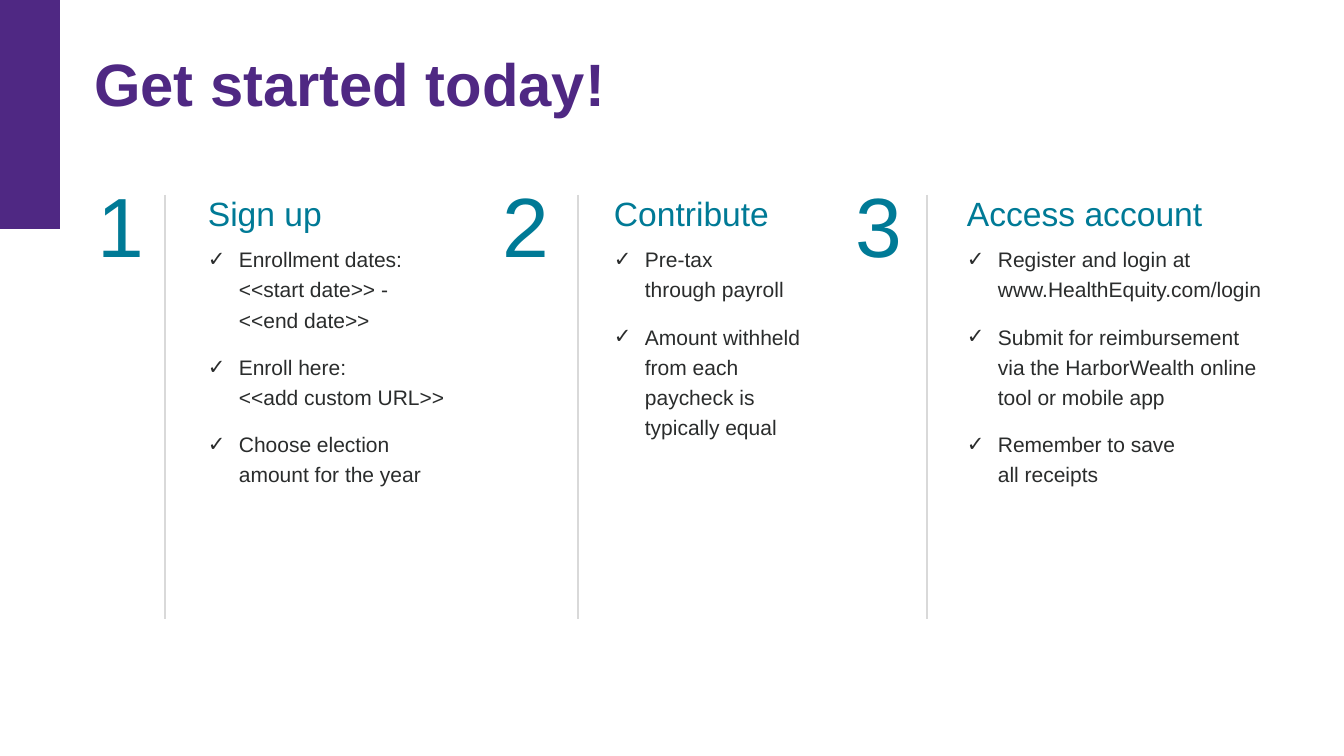
from copy import deepcopy

from lxml.etree import SubElement
from pptx import Presentation
from pptx.dml.color import RGBColor
from pptx.enum.shapes import MSO_CONNECTOR as Connector, MSO_SHAPE as Shape
from pptx.enum.text import PP_ALIGN as Align
from pptx.oxml.ns import qn
from pptx.util import Emu, Pt

TITLE = "Get started today!"
# number left, divider x, body left, body width, heading, bullet items
STEPS = [
    (72, 165, 198, 264, "Sign up", [
        "Enrollment dates: <<start date>> -\v<<end date>>",
        "Enroll here:\v<<add custom URL>>",
        "Choose election amount for the year",
    ]),
    (477, 578, 604, 228, "Contribute", [
        "Pre-tax\vthrough payroll",
        "Amount withheld from each paycheck is typically equal",
    ]),
    (830, 927, 957, 317, "Access account", [
        "Register and login at www.HealthEquity.com/login",
        "Submit for reimbursement via the HarborWealth online tool or mobile app",
        "Remember to save\vall receipts",
    ]),
]

FONT = "Arial"
PURPLE = RGBColor(0x4F, 0x28, 0x83)
TEAL = RGBColor(0x00, 0x7A, 0x96)
INK = RGBColor(0x2A, 0x2C, 0x2C)
GREY = RGBColor(0xD9, 0xD9, 0xD9)

NUMBER_TOP, NUMBER_WIDTH, NUMBER_HEIGHT = 169, 98, 37
BODY_TOP, BODY_HEIGHT = 184, 355
DIVIDER_TOP, DIVIDER_BOTTOM = 195, 619
BULLET_INDENT = 31


def px(length):
    return Emu(round(length * 914400 / 100.8))


def add_frame(slide, left, top, width, height):
    box = slide.shapes.add_textbox(px(left), px(top), px(width), px(height))
    box.text_frame.word_wrap = True
    return box.text_frame


def write(paragraph, text, size, color, bold=False):
    """Fill a paragraph and give its runs and line breaks one style."""
    paragraph.text = text
    for run in paragraph.runs:
        run.font.name = FONT
        run.font.size = Pt(size)
        run.font.bold = bold
        run.font.color.rgb = color
    for line_break in paragraph._p.findall(qn("a:br")):
        line_break.append(deepcopy(paragraph.runs[0]._r.rPr))


def add_check_bullet(paragraph):
    properties = paragraph._p.get_or_add_pPr()
    properties.set("marL", str(px(BULLET_INDENT)))
    properties.set("indent", str(-px(BULLET_INDENT)))
    SubElement(properties, qn("a:buFont"), typeface=FONT)
    SubElement(properties, qn("a:buChar"), char="✓")


def add_divider(slide, x):
    line = slide.shapes.add_connector(
        Connector.STRAIGHT, px(x), px(DIVIDER_TOP), px(x), px(DIVIDER_BOTTOM))
    line.line.color.rgb = GREY
    line.line.width = Pt(2)
    SubElement(line._element.spPr, qn("a:effectLst"))


def add_step(slide, number, step):
    number_left, divider_x, body_left, body_width, heading, items = step

    frame = add_frame(slide, number_left, NUMBER_TOP, NUMBER_WIDTH, NUMBER_HEIGHT)
    write(frame.paragraphs[0], str(number), 60, TEAL)
    frame.paragraphs[0].alignment = Align.CENTER

    frame = add_frame(slide, body_left, BODY_TOP, body_width, BODY_HEIGHT)
    paragraph = frame.paragraphs[0]
    write(paragraph, heading, 24, TEAL)
    paragraph.line_spacing = 1.1
    paragraph.space_after = Pt(6)
    for item in items:
        paragraph = frame.add_paragraph()
        add_check_bullet(paragraph)
        write(paragraph, item, 15, INK)
        paragraph.line_spacing = 1.2
        paragraph.space_after = Pt(12)

    add_divider(slide, divider_x)


def main():
    presentation = Presentation()
    presentation.slide_width = px(1344)
    presentation.slide_height = px(756)
    slide = presentation.slides.add_slide(presentation.slide_layouts[6])

    bar = slide.shapes.add_shape(Shape.RECTANGLE, 0, 0, px(60), px(229))
    bar.shadow.inherit = False
    bar.fill.solid()
    bar.fill.fore_color.rgb = PURPLE
    bar.line.fill.background()

    frame = add_frame(slide, 94, 40, 1194, 74)
    frame.margin_left = frame.margin_right = 0
    frame.margin_top = frame.margin_bottom = 0
    write(frame.paragraphs[0], TITLE, 42.7, PURPLE, bold=True)
    frame.paragraphs[0].line_spacing = 1.1

    for number, step in enumerate(STEPS, start=1):
        add_step(slide, number, step)

    presentation.save("out.pptx")


if __name__ == "__main__":
    main()
